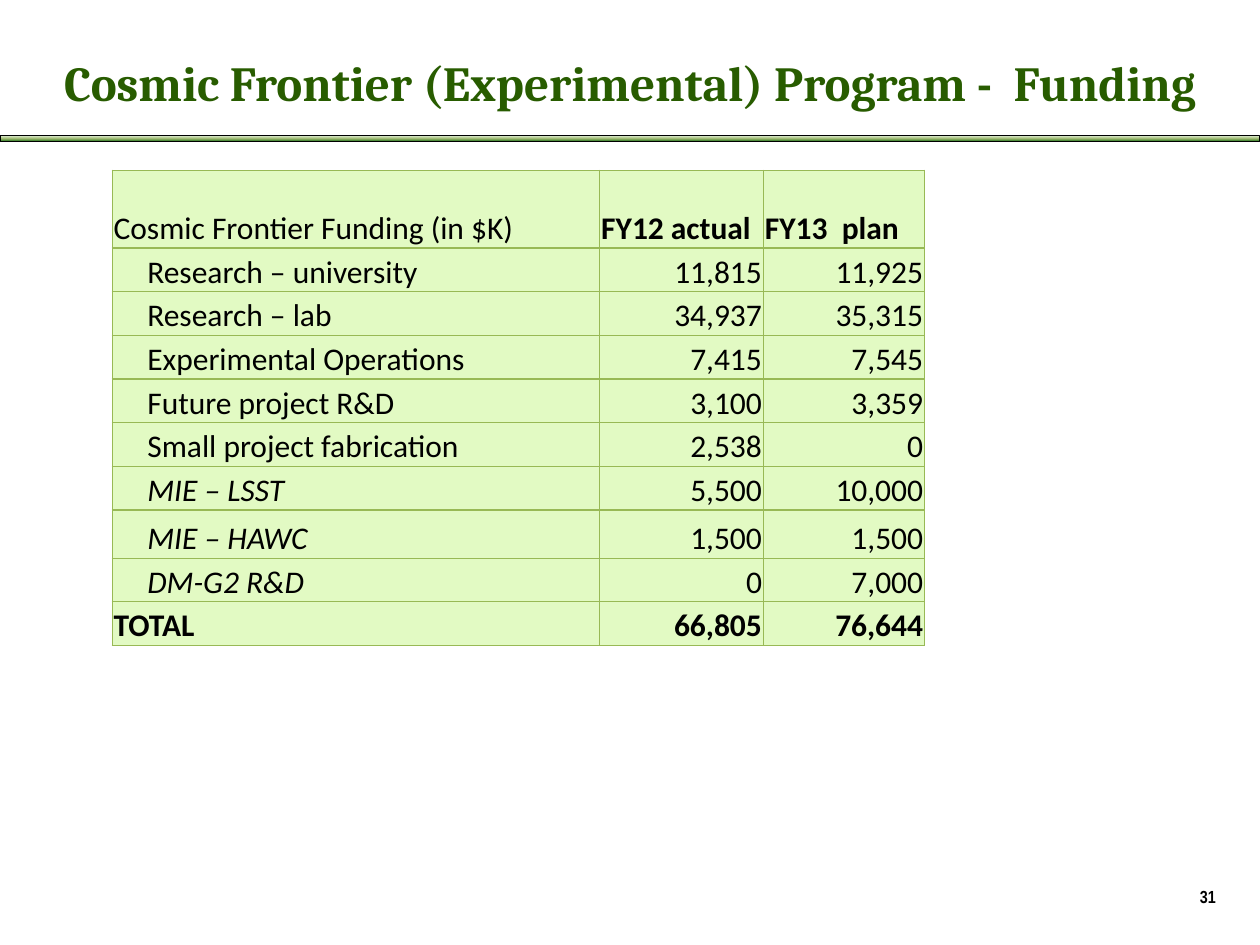
import copy

import pptx
import pptx.dml.color
import pptx.enum.shapes
import pptx.enum.text
import pptx.oxml
import pptx.oxml.ns
import pptx.util

Cm, Pt = pptx.util.Cm, pptx.util.Pt
ALIGN, ANCHOR = pptx.enum.text.PP_ALIGN, pptx.enum.text.MSO_ANCHOR


def color(hex_string):
    return pptx.dml.color.RGBColor.from_string(hex_string)


class FundingSlide:
    """Holds the style and the current slide."""

    GREEN, BLACK = "285C00", "000000"
    CELL, BORDER = "E2FAC3", "98B955"
    BAND = [(0, "DDEBCF"), (0.5, "9CB86E"), (1, "156B13")]

    def __init__(self, presentation):
        self.slide = presentation.slides.add_slide(presentation.slide_layouts[6])

    def style(self, paragraph, font, size, ink, align, bold=False, italic=False):
        paragraph.alignment = align
        paragraph.font.name = font
        paragraph.font.size = Pt(size)
        paragraph.font.bold = bold
        paragraph.font.italic = italic
        paragraph.font.color.rgb = color(ink)

    def text(self, words, left, top, width, height, font, size, ink, align, anchor):
        frame = self.slide.shapes.add_textbox(
            Cm(left), Cm(top), Cm(width), Cm(height)).text_frame
        frame.word_wrap = True
        frame.vertical_anchor = anchor
        frame.text = words
        self.style(frame.paragraphs[0], font, size, ink, align, bold=True)

    def band(self, left, top, width, height):
        rule = self.slide.shapes.add_shape(
            pptx.enum.shapes.MSO_SHAPE.RECTANGLE,
            Cm(left), Cm(top), Cm(width), Cm(height))
        rule.shadow.inherit = False
        rule.line.color.rgb = color(self.BLACK)
        rule.line.width = Pt(0.5)
        rule.fill.gradient()
        rule.fill.gradient_angle = 270
        # A new gradient has two stops; add the third
        stop_list = rule.fill._fill._gradFill.gsLst
        stop_list.append(copy.deepcopy(stop_list[-1]))
        for stop, (position, shade) in zip(rule.fill.gradient_stops, self.BAND):
            stop.position = position
            stop.color.rgb = color(shade)

    def borders(self, cell):
        properties = cell._tc.get_or_add_tcPr()
        for side in ("lnL", "lnR", "lnT", "lnB"):
            properties.append(pptx.oxml.parse_xml(
                f'<a:{side} {pptx.oxml.ns.nsdecls("a")} w="{Pt(0.75)}">'
                f'<a:solidFill><a:srgbClr val="{self.BORDER}"/></a:solidFill>'
                f'</a:{side}>'))

    def cell(self, cell, words, align, bold, italic, indent):
        self.borders(cell)
        cell.fill.solid()
        cell.fill.fore_color.rgb = color(self.CELL)
        cell.vertical_anchor = ANCHOR.BOTTOM
        cell.margin_left = Cm(indent)
        cell.margin_right = cell.margin_top = Cm(0.03)
        cell.margin_bottom = 0
        cell.text = words
        self.style(cell.text_frame.paragraphs[0], "Calibri", 18, self.BLACK,
                   align, bold, italic)

    def table(self, rows, left, top, widths, heights):
        table = self.slide.shapes.add_table(
            len(rows), len(widths), Cm(left), Cm(top),
            Cm(sum(widths)), Cm(sum(heights))).table
        table.first_row = table.horz_banding = False
        for column, width in zip(table.columns, widths):
            column.width = Cm(width)
        last = len(rows) - 1
        for r, (row, height) in enumerate(zip(rows, heights)):
            table.rows[r].height = Cm(height)
            for c, words in enumerate(row):
                label = c == 0
                item = 0 < r < last
                self.cell(
                    table.cell(r, c), words,
                    align=ALIGN.LEFT if label or r == 0 else ALIGN.RIGHT,
                    bold=r == last or (r == 0 and not label),
                    italic=label and words.startswith(("MIE", "DM-")),
                    indent=0.71 if label and item else 0.03)


FUNDING = [
    ("Cosmic Frontier Funding (in $K)", "FY12 actual", "FY13  plan"),
    ("Research – university", "11,815", "11,925"),
    ("Research – lab", "34,937", "35,315"),
    ("Experimental Operations", "7,415", "7,545"),
    ("Future project R&D", "3,100", "3,359"),
    ("Small project fabrication", "2,538", "0"),
    ("MIE – LSST", "5,500", "10,000"),
    ("MIE – HAWC", "1,500", "1,500"),
    ("DM-G2 R&D", "0", "7,000"),
    ("TOTAL", "66,805", "76,644"),
]


def main():
    presentation = pptx.Presentation()
    presentation.slide_width, presentation.slide_height = Cm(25.4), Cm(19.05)
    page = FundingSlide(presentation)

    # Heading and the rule beneath it
    page.band(0, 2.74, 25.4, 0.12)
    page.text("Cosmic Frontier (Experimental) Program -  Funding",
              0, 0.91, 25.4, 1.47, "Cambria", 28, page.GREEN,
              ALIGN.CENTER, ANCHOR.MIDDLE)

    # Funding by activity
    heights = [1.57] + [0.88] * 6 + [0.97] + [0.88] * 2
    page.table(FUNDING, 2.26, 3.43, [9.83, 3.3, 3.25], heights)

    # Page number
    page.text("31", 18.82, 17.73, 5.94, 1.32, "Arial Narrow", 10, page.BLACK,
              ALIGN.RIGHT, ANCHOR.TOP)

    presentation.save("out.pptx")


if __name__ == "__main__":
    main()
